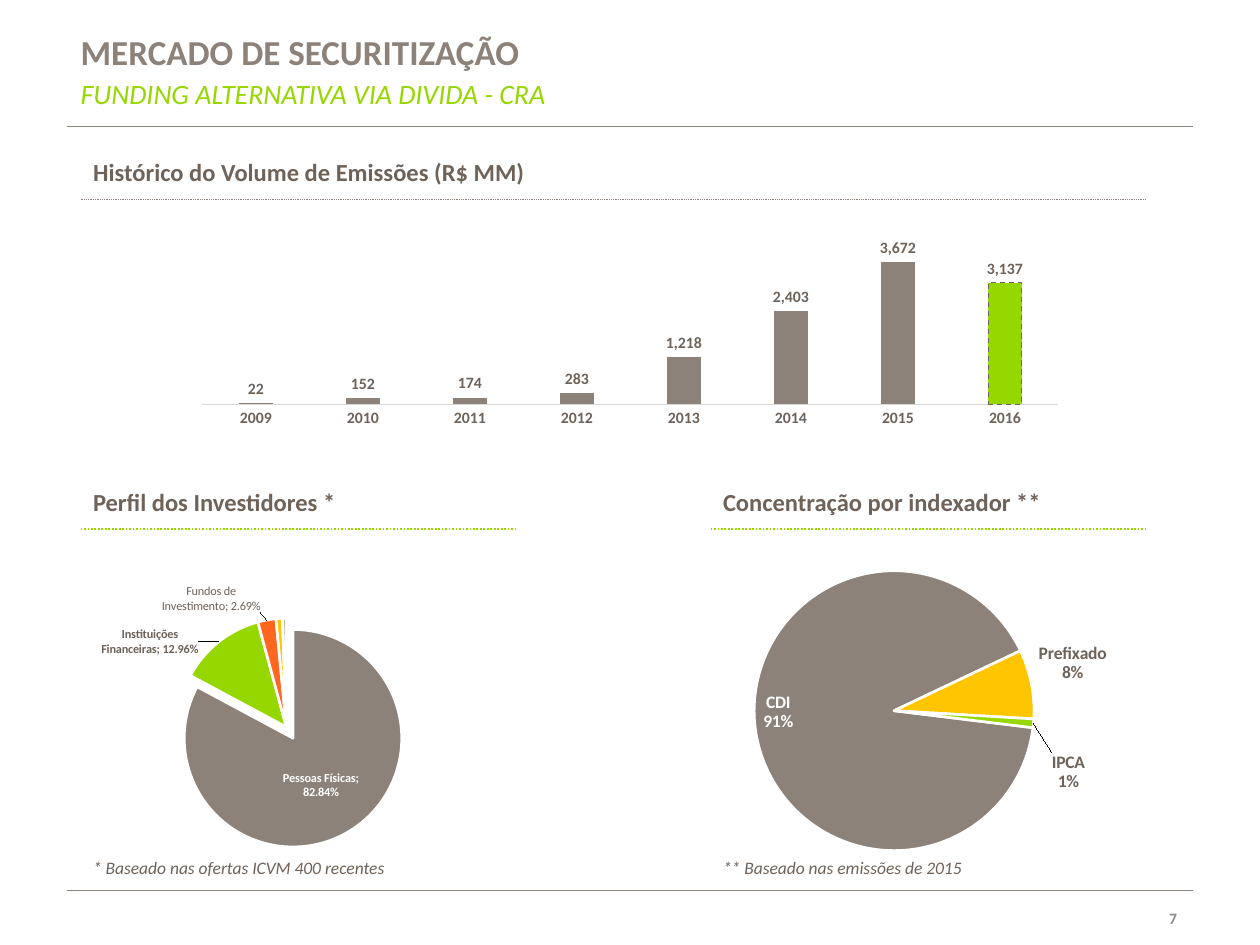
from lxml import etree
from pptx import Presentation
from pptx.chart.data import CategoryChartData
from pptx.dml.color import RGBColor
from pptx.enum import chart as ch, dml, shapes, text
from pptx.oxml import parse_xml
from pptx.oxml.ns import qn
from pptx.util import Inches, Pt

TAUPE = RGBColor(0x8C, 0x82, 0x79)
BROWN = RGBColor(0x6E, 0x62, 0x59)
GREEN = RGBColor(0x97, 0xD7, 0x00)
ORANGE = RGBColor(0xFF, 0x67, 0x1F)
YELLOW = RGBColor(0xFF, 0xC6, 0x00)
SAND = RGBColor(0xB6, 0xAD, 0xA5)
AXIS = RGBColor(0xD9, 0xD9, 0xD9)
GRAY = RGBColor(0x8C, 0x8C, 0x8C)
WHITE = RGBColor(0xFF, 0xFF, 0xFF)
CHART_NS = "http://schemas.openxmlformats.org/drawingml/2006/chart"
POS = ch.XL_LABEL_POSITION


def set_font(font, size, color, bold=False, italic=False):
    """Apply the slide's typeface with the given look."""
    font.name, font.size, font.bold, font.italic = "Calibri", Pt(size), bold, italic
    font.color.rgb = color


def add_text(s, box, content, size, color, bold=False, italic=False,
             wrap=False, flush=False, align=None, anchor=None):
    """Add a one-line text box."""
    tf = s.shapes.add_textbox(*map(Inches, box)).text_frame
    tf.word_wrap = wrap
    if flush:
        tf.margin_left = tf.margin_top = tf.margin_bottom = 0
    if anchor is not None:
        tf.vertical_anchor = anchor
    p = tf.paragraphs[0]
    if align is not None:
        p.alignment = align
    r = p.add_run()
    r.text = content
    set_font(r.font, size, color, bold, italic)


def add_rule(s, left, right, y, color, width, dotted=False):
    """Add a horizontal line."""
    line = s.shapes.add_connector(shapes.MSO_CONNECTOR.STRAIGHT, Inches(left), Inches(y),
                                  Inches(right), Inches(y))
    line.line.color.rgb = color
    line.line.width = Pt(width)
    if dotted:
        line.line.dash_style = dml.MSO_LINE.ROUND_DOT
    etree.SubElement(line._element.spPr, qn("a:effectLst"))


def chart_layout(x, y, w=None, h=None):
    """Return a manual layout: a plot area with w and h, else a label offset."""
    pairs = [("x", x), ("y", y)]
    if w is not None:
        pairs = ([("layoutTarget", "inner"), ("xMode", "edge"), ("yMode", "edge")]
                 + pairs + [("w", w), ("h", h)])
    body = "".join(f'<c:{tag} val="{val}"/>' for tag, val in pairs)
    return parse_xml(f'<c:layout xmlns:c="{CHART_NS}"><c:manualLayout>{body}'
                     '</c:manualLayout></c:layout>')


def add_chart(s, kind, box, plot, cats, vals, fmt):
    """Add a single-series chart with a fixed plot area."""
    data = CategoryChartData(number_format=fmt)
    data.categories = cats
    data.add_series("Series 1", vals)
    chart = s.shapes.add_chart(kind, *map(Inches, box), data).chart
    chart.has_legend = chart.has_title = False
    set_font(chart.font, 10, BROWN, bold=True)
    area = chart._chartSpace.chart.plotArea
    for old in area.findall(qn("c:layout")):
        area.remove(old)
    area.insert(0, chart_layout(*plot))
    return chart


def add_columns(s):
    """Add the yearly issue volume chart."""
    chart = add_chart(s, ch.XL_CHART_TYPE.COLUMN_CLUSTERED, (1.45, 1.14, 7.1, 2.36),
                      (0.022, 0.356, 0.957, 0.521), [str(y) for y in range(2009, 2017)],
                      (22, 152, 174, 283, 1218, 2403, 3672, 3137), "#,##0")
    plot = chart.plots[0]
    plot.vary_by_categories = False
    plot.gap_width, plot.overlap = 219, -27
    values, years = chart.value_axis, chart.category_axis
    values.visible = values.has_major_gridlines = False
    values.minimum_scale, values.maximum_scale = 0, 4000
    years.major_tick_mark = ch.XL_TICK_MARK.NONE
    years.format.line.color.rgb = AXIS
    years.format.line.width = Pt(0.75)
    set_font(years.tick_labels.font, 9, BROWN, bold=True)
    series = plot.series[0]
    series.format.fill.solid()
    series.format.fill.fore_color.rgb = TAUPE
    last = series.points[7].format
    last.fill.solid()
    last.fill.fore_color.rgb = GREEN
    last.line.color.rgb = BROWN
    last.line.width = Pt(0.75)
    last.line.dash_style = dml.MSO_LINE.DASH
    labels = series.data_labels
    labels.show_value = True
    labels.number_format, labels.number_format_is_linked = "#,##0", False
    labels.position = POS.OUTSIDE_END
    set_font(labels.font, 9, BROWN, bold=True)


def label_slice(series, index, fmt, sep, size, color, position, offset=None, custom=None):
    """Label one slice with its category and value, or with custom text."""
    label = series.points[index].data_label
    if custom:
        r = label.text_frame.paragraphs[0].add_run()
        r.text = custom
        set_font(r.font, size, color)
    else:
        set_font(label.font, size, color, bold=True)
    label.position = position
    node = series._element.xpath(f"c:dLbls/c:dLbl[c:idx/@val='{index}']")[0]
    node.find(qn("c:showCatName")).set("val", "1")
    etree.SubElement(node, qn("c:separator")).text = sep
    if not custom:
        node.insert(1, node.makeelement(qn("c:numFmt"),
                                        {"formatCode": fmt, "sourceLinked": "0"}))
    if offset:
        node.insert(1, chart_layout(*offset))


def add_pie(s, box, plot, cats, vals, colors, fmt, sep, labels, start=0):
    """Add a pie chart with white gaps; slices without a label stay bare."""
    chart = add_chart(s, ch.XL_CHART_TYPE.PIE, box, plot, cats, vals, fmt)
    pie = chart.plots[0]
    pie.vary_by_categories = True
    series = pie.series[0]
    for i, color in enumerate(colors):
        look = series.points[i].format
        look.fill.solid()
        look.fill.fore_color.rgb = color
        look.line.color.rgb = WHITE
        look.line.width = Pt(1.5)
    for i, options in enumerate(labels):
        label_slice(series, i, fmt, sep, *options)
    angle = pie._element.find(qn("c:firstSliceAng"))
    if angle is None:
        angle = etree.SubElement(pie._element, qn("c:firstSliceAng"))
    angle.set("val", str(start))
    return series


def explode(series, index, percent):
    """Pull one slice out of the pie."""
    point = series._element.xpath(f"c:dPt[c:idx/@val='{index}']")[0]
    point.find(qn("c:spPr")).addprevious(
        point.makeelement(qn("c:explosion"), {"val": str(percent)}))


def main():
    """Build the slide."""
    prs = Presentation()
    prs.slide_width, prs.slide_height = Inches(10), Inches(7.5)
    s = prs.slides.add_slide(prs.slide_layouts[6])
    for y in (1, 7.07):
        add_rule(s, 0.53, 9.47, y, TAUPE, 0.5)
    add_text(s, (8.99, 7.09, 0.45, 0.4), "7", 9, GRAY, bold=True, wrap=True,
             align=text.PP_ALIGN.RIGHT, anchor=text.MSO_ANCHOR.MIDDLE)
    add_text(s, (0.64, 0.24, 6.23, 0.34), "MERCADO DE SECURITIZAÇÃO", 20, TAUPE,
             bold=True, wrap=True, flush=True)
    add_text(s, (0.64, 0.61, 6.23, 0.27), "FUNDING ALTERNATIVA VIA DIVIDA - CRA", 16, GREEN,
             italic=True, wrap=True, flush=True)
    add_columns(s)
    investors = add_pie(
        s, (0.55, 4.2, 4.17, 2.63), (0.206, 0.268, 0.414, 0.659),
        ("Pessoas Físicas", "Instituições Financeiras", "Fundos de Investimento",
         "Pessoas Vinculadas", "Outros"),
        (0.8284, 0.1296, 0.0269, 0.0094, 0.0057), (TAUPE, GREEN, ORANGE, YELLOW, SAND),
        "0.00%", "; ",
        ((7, WHITE, POS.CENTER),
         (7, BROWN, POS.OUTSIDE_END, (-0.03, 0.06)),
         (7, BROWN, POS.OUTSIDE_END, (-0.01, 0), "Fundos de Investimento; 2.69%")))
    explode(investors, 0, 12)
    add_pie(s, (5.2, 4.39, 4.39, 2.51), (0.179, 0.056, 0.506, 0.885),
            ("CDI", "Prefixado", "IPCA"), (0.91, 0.08, 0.01), (TAUPE, YELLOW, GREEN),
            "0%", "\n",
            ((10, WHITE, POS.INSIDE_END),
             (10, BROWN, POS.OUTSIDE_END),
             (10, BROWN, POS.OUTSIDE_END, (0.02, 0.09))), start=97)
    for left, top, width, right, title, color, weight in (
            (0.64, 1.2, 3.65, 9.1, "Histórico do Volume de Emissões (R$ MM)", TAUPE, 0.5),
            (0.64, 3.82, 2.14, 4.09, "Perfil dos Investidores *", GREEN, 1),
            (5.64, 3.82, 2.74, 9.1, "Concentração por indexador **", GREEN, 1)):
        add_text(s, (left, top, width, 0.34), title, 14, BROWN, bold=True)
        add_rule(s, left, right, top + 0.38, color, weight, dotted=True)
    for left, width, note in ((0.64, 2.55, "* Baseado nas ofertas ICVM 400 recentes"),
                              (5.64, 2.12, "** Baseado nas emissões de 2015")):
        add_text(s, (left, 6.75, width, 0.27), note, 10, BROWN, italic=True)
    prs.save("out.pptx")


if __name__ == "__main__":
    main()
